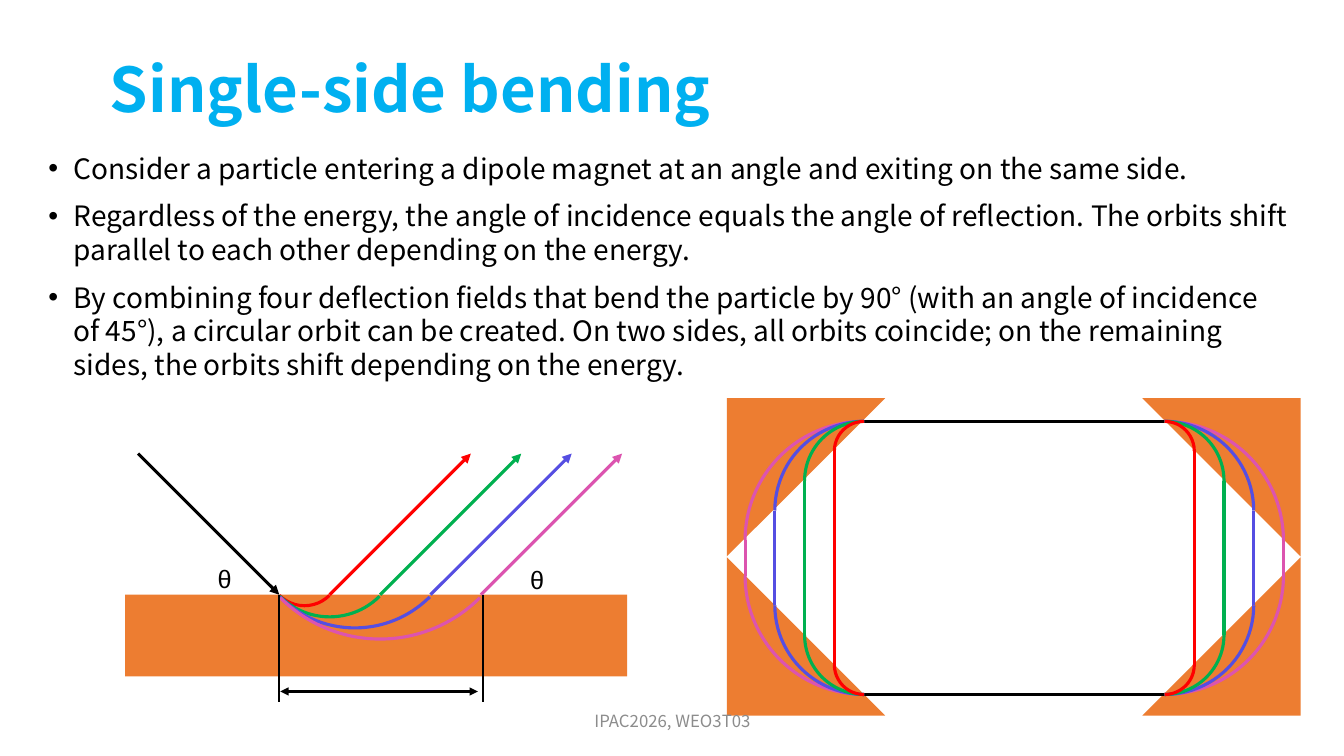
import pptx
import pptx.util
import pptx.dml.color
import pptx.enum.shapes
import pptx.enum.text
import pptx.oxml.ns
from lxml import etree

Inches, Pt = pptx.util.Inches, pptx.util.Pt
KIND = pptx.enum.shapes.MSO_SHAPE
ALIGN = pptx.enum.text.PP_ALIGN
ANCHOR = pptx.enum.text.MSO_ANCHOR
qn = pptx.oxml.ns.qn

FONT = "Noto Sans CJK JP"
BLACK, ORANGE = "000000", "ED7D31"
TITLE = "Single-side bending"
POINTS = [
    "Consider a particle entering a dipole magnet at an angle and exiting on the same side.",
    "Regardless of the energy, the angle of incidence equals the angle of reflection. "
    "The orbits shift parallel to each other depending on the energy.",
    "By combining four deflection fields that bend the particle by 90° (with an angle of "
    "incidence of 45°), a circular orbit can be created. On two sides, all orbits coincide; "
    "on the remaining sides, the orbits shift depending on the energy.",
]
FOOTER = "IPAC2026, WEO3T03"
# Orbit colours from lowest to highest energy
ORBITS = ["FF0000", "00B050", "554EE2", "DC54AF"]

# Single magnet: entry point, run of the rays, exit step per energy
ENTRY, FACE, RUN, STEP = 2.77, 5.9, 1.4, 0.5
# Ring: corners of the shared orbit and radius step per energy
LEFT, RIGHT, TOP, BASE, RADIUS = 8.57, 11.55, 4.18, 6.89, 0.295
WEDGE = 1.57


def rgb(code):
    return pptx.dml.color.RGBColor.from_string(code)


def place(shape, *box):
    shape.left, shape.top, shape.width, shape.height = map(Inches, box)


def write(frame, *texts, size=18, font=FONT, color=BLACK, bold=False, align=ALIGN.LEFT,
          anchor=ANCHOR.TOP, wrap=True, bullet=False, gap=0, lead=1.0):
    frame.word_wrap = wrap
    frame.auto_size = pptx.enum.text.MSO_AUTO_SIZE.NONE
    frame.vertical_anchor = anchor
    for i, text in enumerate(texts):
        para = frame.paragraphs[0] if i == 0 else frame.add_paragraph()
        para.text = text
        para.alignment = align
        para.line_spacing = lead
        para.space_before = Pt(gap if i else 0)
        if bullet:
            props = para._p.get_or_add_pPr()
            props.set("marL", str(Inches(0.25)))
            props.set("indent", str(Inches(-0.25)))
            etree.SubElement(props, qn("a:buFont")).set("typeface", "Arial")
            etree.SubElement(props, qn("a:buChar")).set("char", "•")
        face = para.font
        face.size, face.name, face.bold = Pt(size), font, bold
        face.color.rgb = rgb(color)


def label(group, box, text, **form):
    shape = group.shapes.add_textbox(*map(Inches, box))
    write(shape.text_frame, text, **form)


def line(group, start, end, color=BLACK, width=2.25, heads=()):
    """Draw a line; heads lists the ends with arrows: headEnd, tailEnd."""
    link = group.shapes.add_connector(
        pptx.enum.shapes.MSO_CONNECTOR.STRAIGHT, *map(Inches, (*start, *end)))
    link.line.color.rgb = rgb(color)
    link.line.width = Pt(width)
    props = link.element.spPr
    for head in heads:
        etree.SubElement(props.find(qn("a:ln")), qn("a:" + head)).set("type", "triangle")
    etree.SubElement(props, qn("a:effectLst"))


def block(group, kind, *box):
    shape = group.shapes.add_shape(kind, *map(Inches, box))
    shape.shadow.inherit = False
    shape.fill.solid()
    shape.fill.fore_color.rgb = rgb(ORANGE)
    shape.line.fill.background()
    return shape


def arc(group, x, y, radius, start, end, color):
    """Draw an arc about (x, y) between two angles in degrees, clockwise from the right."""
    side = 2 * radius
    shape = group.shapes.add_shape(
        KIND.ARC, *map(Inches, (x - radius, y - radius, side, side)))
    shape.shadow.inherit = False
    shape.fill.background()
    shape.line.color.rgb = rgb(color)
    shape.line.width = Pt(2.25)
    shape.adjustments[0] = start * 0.6
    shape.adjustments[1] = end % 360 * 0.6


def magnet(group):
    block(group, KIND.RECTANGLE, 1.24, FACE, 4.98, 0.81)
    line(group, (ENTRY - RUN, FACE - RUN), (ENTRY, FACE), heads=["tailEnd"])
    for n, color in enumerate(ORBITS, 1):
        out = ENTRY + STEP * n
        arc(group, ENTRY + STEP * n / 2, FACE - 0.24 * n, 0.35 * n, 45, 135, color)
        line(group, (out, FACE), (out + RUN, FACE - RUN), color, heads=["tailEnd"])
    for x, y in [(2.06, 5.54), (5.16, 5.55)]:
        label(group, (x, y, 0.3, 0.36), "θ", font="Arial", wrap=False)
    for x in (ENTRY, 4.79):
        line(group, (x, FACE), (x, 6.96), width=1.5)
    line(group, (ENTRY + 0.01, 6.86), (4.74, 6.86), width=1.5, heads=["headEnd", "tailEnd"])


def ring(group):
    for x, flip in [(7.21, False), (11.33, True)]:
        for y, over in [(3.95, True), (5.53, False)]:
            wedge = block(group, KIND.RIGHT_TRIANGLE, x, y, WEDGE, WEDGE)
            frame = wedge.element.spPr.find(qn("a:xfrm"))
            frame.set("flipH", str(int(flip)))
            frame.set("flipV", str(int(over)))
    for y in (TOP, BASE):
        line(group, (LEFT, y), (RIGHT, y))
    for n, color in reversed(list(enumerate(ORBITS, 1))):
        r = RADIUS * n
        high, low = TOP + r, BASE - r
        for x, y, start in [(LEFT, high, 180), (RIGHT, high, 270),
                            (RIGHT, low, 0), (LEFT, low, 90)]:
            arc(group, x, y, r, start, start + 90, color)
        for x in (LEFT - r, RIGHT + r):
            line(group, (x, high), (x, low), color)


def main():
    deck = pptx.Presentation()
    deck.slide_width, deck.slide_height = Inches(13.33), Inches(7.5)
    slide = deck.slides.add_slide(deck.slide_layouts[1])
    title, body = slide.placeholders
    place(title, 0.99, 0.19, 11.5, 1.45)
    write(title.text_frame, TITLE, size=44, color="00B0F0", bold=True,
          anchor=ANCHOR.MIDDLE, lead=0.9)
    place(body, 0.38, 1.45, 12.5, 2.17)
    write(body.text_frame, *POINTS, size=20, bullet=True, gap=10)
    magnet(slide.shapes.add_group_shape())
    ring(slide.shapes.add_group_shape())
    label(slide, (4.42, 6.95, 4.5, 0.4), FOOTER, size=12, color="8C8C8C",
          align=ALIGN.CENTER, anchor=ANCHOR.MIDDLE)
    deck.save("out.pptx")


if __name__ == "__main__":
    main()
